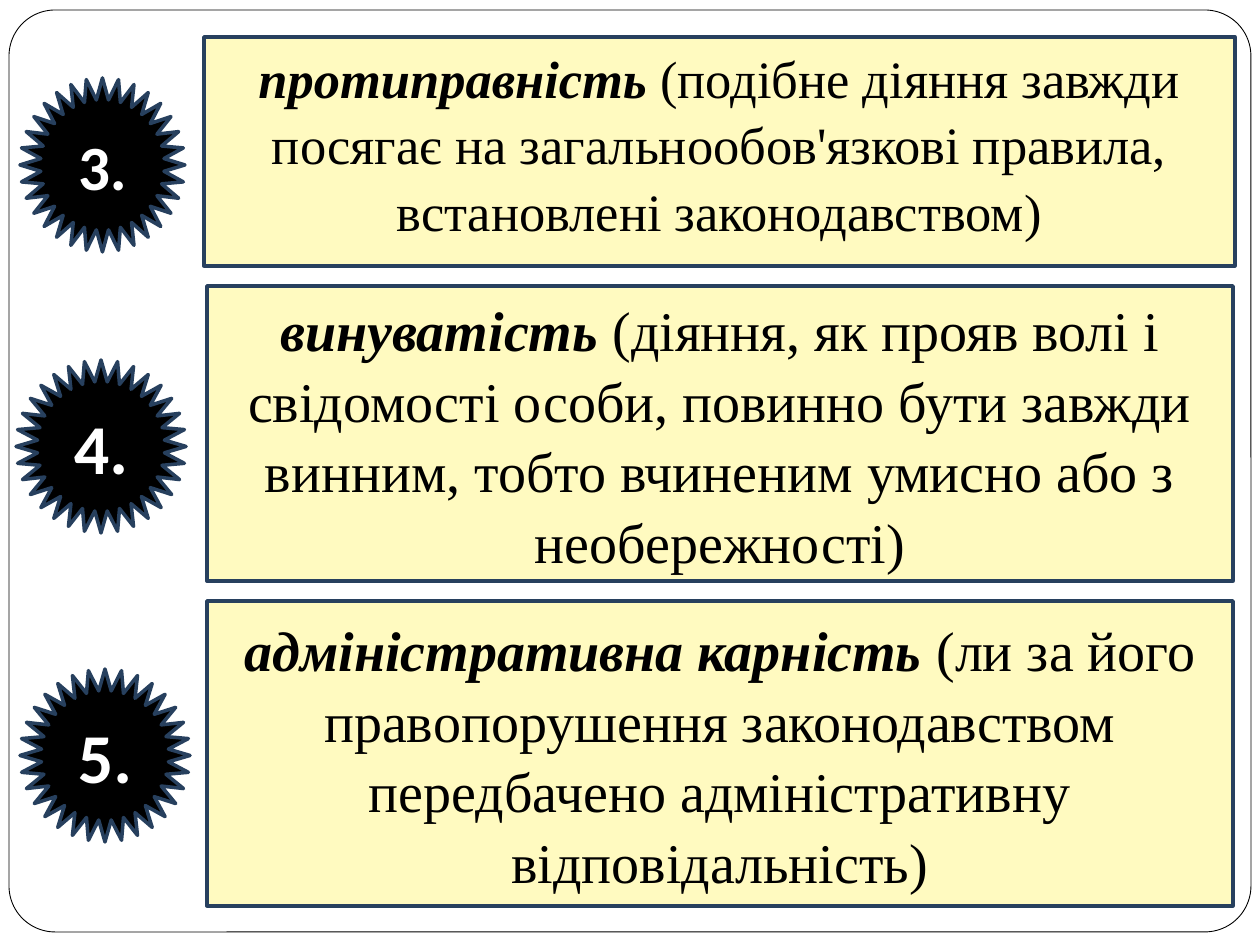
from dataclasses import dataclass

from pptx import Presentation
from pptx.dml.color import RGBColor as RGB
from pptx.enum.shapes import MSO_SHAPE as Kind
from pptx.enum.text import MSO_ANCHOR as Anchor, PP_ALIGN as Align
from pptx.util import Pt

SCALE = 914400 / 126  # EMU in one px


def px(n):
    return round(n * SCALE)


@dataclass(frozen=True)
class Theme:
    white: str = "FFFFFF"
    black: str = "000000"
    cream: str = "FFFAC0"
    navy: str = "27405E"
    serif: str = "Times New Roman"
    sans: str = "Calibri"
    small: int = 30
    large: int = 32
    mark: int = 36
    big: int = 40
    thin: float = 0.5
    thick: float = 2
    lead: float = 1.05


THEME = Theme()


class Deck:
    def __init__(self, theme):
        self.theme = theme
        self.file = Presentation()
        self.file.slide_width, self.file.slide_height = px(1260), px(945)
        self.slide = self.file.slides.add_slide(self.file.slide_layouts[6])

    def shape(self, kind, box, fill, line, width):
        item = self.slide.shapes.add_shape(kind, *map(px, box))
        item.shadow.inherit = False
        item.fill.solid()
        item.fill.fore_color.rgb = RGB.from_string(fill)
        item.line.color.rgb = RGB.from_string(line)
        item.line.width = Pt(width)
        return item

    def label(self, item, runs, color, anchor=Anchor.MIDDLE, lead=1.0):
        frame = item.text_frame
        frame.word_wrap = True
        frame.vertical_anchor = anchor
        para = frame.paragraphs[0]
        para.alignment = Align.CENTER
        para.line_spacing = lead
        for text, style in runs:
            run = para.add_run()
            run.text = text
            run.font.color.rgb = RGB.from_string(color)
            for name, value in style.items():
                setattr(run.font, name, value)

    def border(self, box):
        t = self.theme
        item = self.shape(Kind.ROUNDED_RECTANGLE, box, t.white, t.black, t.thin)
        item.adjustments[0] = 0.05

    def badge(self, box, text, size):
        t = self.theme
        item = self.shape(Kind.STAR_32_POINT, box, t.black, t.navy, t.thick)
        style = dict(name=t.sans, size=Pt(size), bold=True)
        self.label(item, [(text, style)], t.white)

    def panel(self, box, term, text, size, anchor):
        t = self.theme
        item = self.shape(Kind.RECTANGLE, box, t.cream, t.navy, t.thick)
        base = dict(name=t.serif, size=Pt(size))
        runs = [(term, dict(base, bold=True, italic=True)),
                (" " + text, dict(base, bold=False, italic=False))]
        self.label(item, runs, t.black, anchor, t.lead)


# Each row: badge box, number, size; panel box, term, text, size, anchor
ROWS = [
    (((20, 78, 165, 174), "3.", THEME.mark),
     ((204, 37, 1031, 229), "протиправність",
      "(подібне діяння завжди посягає на загальнообов'язкові правила, "
      "встановлені законодавством)", THEME.small, Anchor.TOP)),
    (((16, 360, 170, 173), "4.", THEME.big),
     ((207, 286, 1026, 295), "винуватість",
      "(діяння, як прояв волі і свідомості особи, повинно бути завжди "
      "винним, тобто вчиненим умисно або з необережності)",
      THEME.large, Anchor.MIDDLE)),
    (((20, 669, 170, 173), "5.", THEME.big),
     ((207, 601, 1026, 305), "адміністративна карність",
      "(ли за його правопорушення законодавством передбачено "
      "адміністративну відповідальність)", THEME.large, Anchor.MIDDLE)),
]


def main():
    deck = Deck(THEME)
    # Page border
    deck.border((9, 10, 1242, 922))
    # Numbered features
    for badge, panel in ROWS:
        deck.panel(*panel)
        deck.badge(*badge)
    deck.file.save("out.pptx")


if __name__ == "__main__":
    main()
